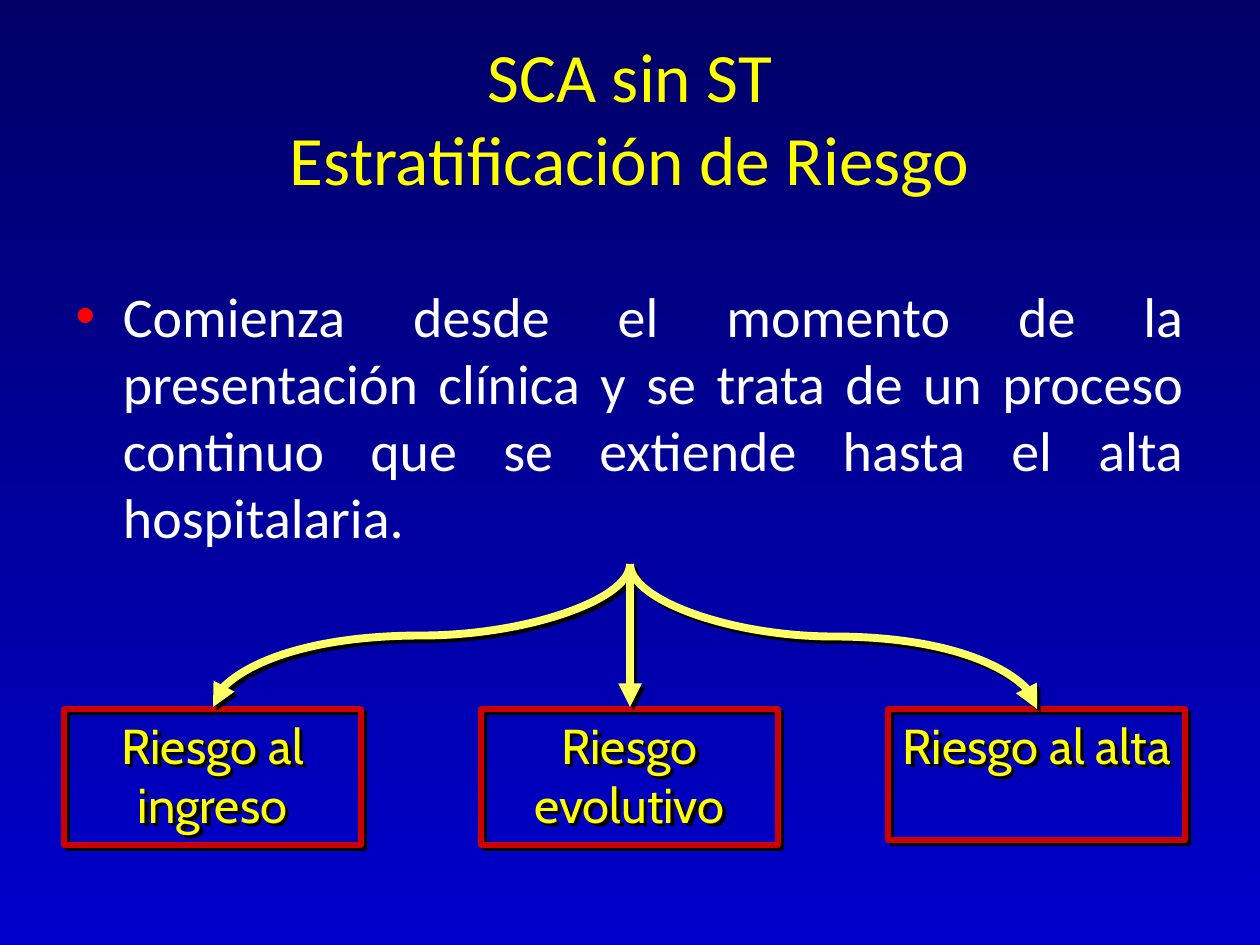
from lxml import etree
from pptx import Presentation
from pptx.dml.color import RGBColor
from pptx.enum.shapes import MSO_CONNECTOR, MSO_SHAPE
from pptx.enum.text import MSO_ANCHOR, MSO_AUTO_SIZE, PP_ALIGN
from pptx.oxml.ns import qn
from pptx.util import Pt

TITLE_AND_CONTENT = 1
CENTER, JUSTIFY = PP_ALIGN.CENTER, PP_ALIGN.JUSTIFY
TOP, MIDDLE = MSO_ANCHOR.TOP, MSO_ANCHOR.MIDDLE
CURVE, STRAIGHT = MSO_CONNECTOR.CURVE, MSO_CONNECTOR.STRAIGHT
EMU_PER_PX = 914400 / 126

COLORS = {
    "sky": "000066", "deep": "0000CC", "heading": "FFFF00", "body": "FFFFFF",
    "bullet": "FF0000", "border": "CC0000", "arrow": "FFFF66", "shadow": "000000",
}

TITLE = "SCA sin ST\vEstratificación de Riesgo"
BODY = ("Comienza desde el momento de la presentación clínica y se trata de un "
        "proceso continuo que se extiende hasta el alta hospitalaria.")
TITLE_BOX = (63, 38, 1134, 157)
BODY_BOX = (63, 275, 1134, 290)

# text, left, height
STAGES = [
    ("Riesgo al ingreso", 64, 136),
    ("Riesgo evolutivo", 481, 136),
    ("Riesgo al alta", 888, 131),
]
STAGE_TOP, STAGE_WIDTH = 709, 297

ARROW_START = (630, 564)
ARROW_ENDS = [(213, 707), (630, 707), (1037, 709)]

TITLE_FONT = {"name": "Calibri", "size": Pt(39.6)}
BODY_FONT = {"name": "Calibri", "size": Pt(32)}
STAGE_FONT = {"name": "Cabin", "size": Pt(28)}


def px(value):
    return round(value * EMU_PER_PX)


def rgb(name):
    return RGBColor.from_string(COLORS[name])


def place(shape, box):
    for name, value in zip(("left", "top", "width", "height"), box):
        setattr(shape, name, px(value))


def write(shape, text, font, color, alignment, anchor):
    frame = shape.text_frame
    frame.text = text
    frame.word_wrap = True
    frame.auto_size = MSO_AUTO_SIZE.NONE
    frame.vertical_anchor = anchor
    paragraph = frame.paragraphs[0]
    paragraph.alignment = alignment
    for run in paragraph.runs:
        for name, value in font.items():
            setattr(run.font, name, value)
        run.font.color.rgb = rgb(color)
    return paragraph


def add_color(parent, name):
    etree.SubElement(parent, qn("a:srgbClr"), val=COLORS[name])


def add_shadow(shape):
    """Give the shape a hard shadow towards the lower right."""
    effects = etree.SubElement(shape._element.spPr, qn("a:effectLst"))
    shadow = etree.SubElement(effects, qn("a:outerShdw"), dist=str(Pt(2.8)),
                              dir="2700000", algn="ctr", rotWithShape="0")
    add_color(shadow, "shadow")


def set_line(shape, color, width):
    shape.line.color.rgb = rgb(color)
    shape.line.width = Pt(width)


def add_stage(slide, text, left, height):
    shape = slide.shapes.add_shape(MSO_SHAPE.RECTANGLE, 0, 0, 0, 0)
    place(shape, (left, STAGE_TOP, STAGE_WIDTH, height))
    shape.fill.background()
    set_line(shape, "border", 3)
    add_shadow(shape)
    write(shape, text, STAGE_FONT, "heading", CENTER, TOP)


def add_arrow(slide, start, end):
    """Join two points; a sideways arrow is a curve turned a quarter so it leaves downwards."""
    (x1, y1), (x2, y2) = start, end
    curved = x1 != x2
    side = 1 if x2 > x1 else -1
    if curved:
        center_x, center_y = (x1 + x2) / 2, (y1 + y2) / 2
        half_drop, half_spread = side * (y2 - y1) / 2, abs(x2 - x1) / 2
        x1, x2 = center_x + half_drop, center_x - half_drop
        y1, y2 = center_y - half_spread, center_y + half_spread
    arrow = slide.shapes.add_connector(CURVE if curved else STRAIGHT,
                                       px(x1), px(y1), px(x2), px(y2))
    if curved:
        quarter_turns = 3 if side > 0 else 1
        arrow._element.spPr.find(qn("a:xfrm")).set("rot", str(quarter_turns * 5400000))
    set_line(arrow, "arrow", 4.5)
    etree.SubElement(arrow.line._get_or_add_ln(), qn("a:tailEnd"), type="triangle")
    add_shadow(arrow)


def main():
    presentation = Presentation()
    presentation.slide_width, presentation.slide_height = px(1260), px(945)
    slide = presentation.slides.add_slide(presentation.slide_layouts[TITLE_AND_CONTENT])

    background = slide.background.fill
    background.gradient()
    background.gradient_angle = 270
    for stop, position, color in zip(background.gradient_stops, (0, 1), ("sky", "deep")):
        stop.position = position
        stop.color.rgb = rgb(color)

    title, body = slide.placeholders
    place(title, TITLE_BOX)
    write(title, TITLE, TITLE_FONT, "heading", CENTER, MIDDLE)
    place(body, BODY_BOX)
    paragraph = write(body, BODY, BODY_FONT, "body", JUSTIFY, TOP)
    properties = paragraph._p.get_or_add_pPr()
    add_color(etree.SubElement(properties, qn("a:buClr")), "bullet")
    etree.SubElement(properties, qn("a:buChar"), char="•")

    for stage in STAGES:
        add_stage(slide, *stage)
    for end in ARROW_ENDS:
        add_arrow(slide, ARROW_START, end)

    presentation.save("out.pptx")


if __name__ == "__main__":
    main()
